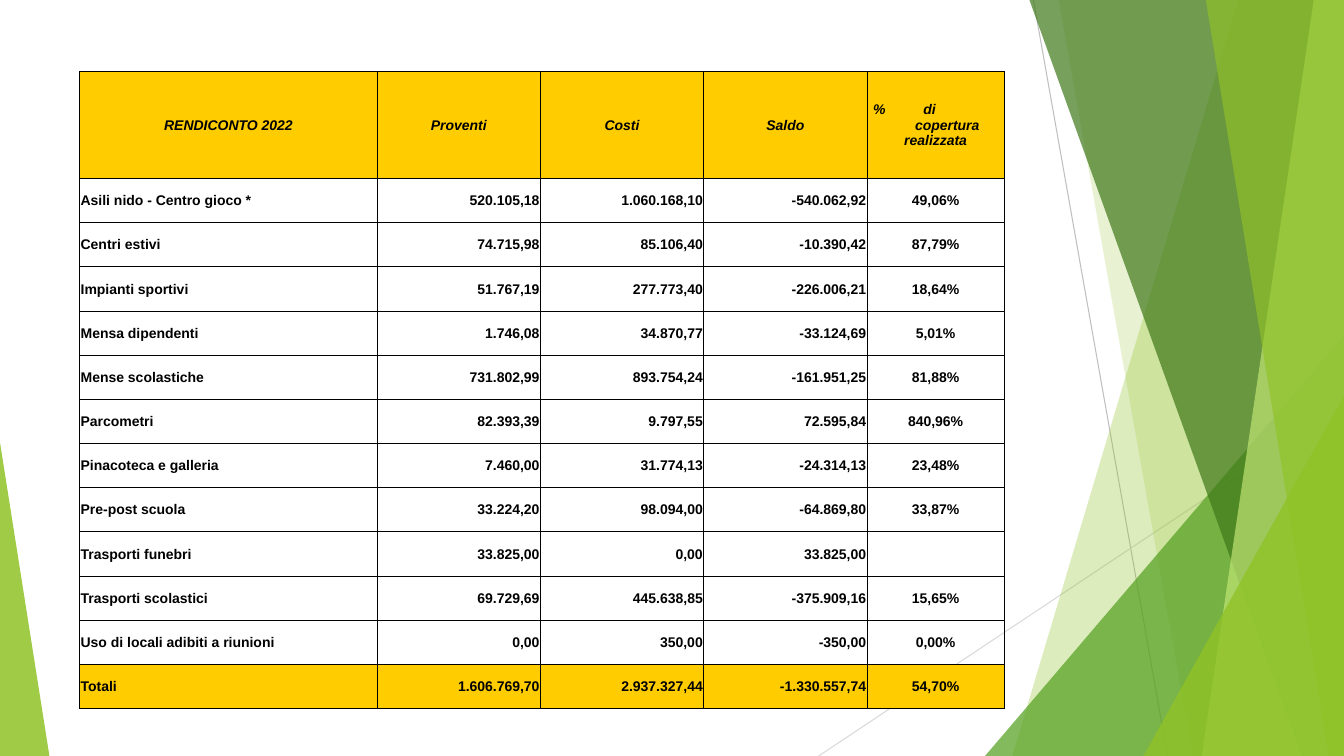
from lxml.etree import SubElement
from pptx import Presentation
from pptx.dml.color import RGBColor
from pptx.enum.shapes import MSO_CONNECTOR, MSO_SHAPE
from pptx.enum.text import MSO_ANCHOR, PP_ALIGN
from pptx.oxml.ns import qn
from pptx.util import Inches, Pt

HEADINGS = ["RENDICONTO 2022", "Proventi", "Costi", "Saldo", "%\tdi\ncopertura\nrealizzata"]
SERVICES = [
    ("Asili nido - Centro gioco *", "520.105,18", "1.060.168,10", "-540.062,92", "49,06%"),
    ("Centri estivi", "74.715,98", "85.106,40", "-10.390,42", "87,79%"),
    ("Impianti sportivi", "51.767,19", "277.773,40", "-226.006,21", "18,64%"),
    ("Mensa dipendenti", "1.746,08", "34.870,77", "-33.124,69", "5,01%"),
    ("Mense scolastiche", "731.802,99", "893.754,24", "-161.951,25", "81,88%"),
    ("Parcometri", "82.393,39", "9.797,55", "72.595,84", "840,96%"),
    ("Pinacoteca e galleria", "7.460,00", "31.774,13", "-24.314,13", "23,48%"),
    ("Pre-post scuola", "33.224,20", "98.094,00", "-64.869,80", "33,87%"),
    ("Trasporti funebri", "33.825,00", "0,00", "33.825,00", ""),
    ("Trasporti scolastici", "69.729,69", "445.638,85", "-375.909,16", "15,65%"),
    ("Uso di locali adibiti a riunioni", "0,00", "350,00", "-350,00", "0,00%"),
]
TOTALS = ("Totali", "1.606.769,70", "2.937.327,44", "-1.330.557,74", "54,70%")

WIDTH, HEIGHT = 13.33, 7.5
GOLD, BLACK = "FFCC00", "000000"
TABLE_LEFT, TABLE_TOP, TABLE_HEIGHT, HEADING_HEIGHT = 0.79, 0.71, 6.32, 1.06
COLUMN_WIDTHS = [2.95, 1.62, 1.62, 1.62, 1.36]
COLUMN_ALIGNS = [PP_ALIGN.LEFT] + [PP_ALIGN.RIGHT] * 3 + [PP_ALIGN.CENTER]

RAYS = [
    ((10.25, 0), (11.58, HEIGHT), "BFBFBF"),
    ((WIDTH, 4.03), (8.12, HEIGHT), "D9D9D9"),
]
FACETS = [
    ("band", 12.28, 10.04, "90C226", 30),
    ("band", 10.5, 11.83, "90C226", 20),
    ("right peak", 9.77, 3.33, "54A021", 72),
    ("band", 10.21, 12.91, "3F7819", 70),
    ("band", 13.03, 11.92, "C0E474", 70),
    ("band", 11.96, 13.18, "90C226", 65),
    ("right peak", 11.34, 3.93, "90C226", 80),
    ("left peak", 0.49, 4.39, "90C226", 85),
]


def color(code):
    return RGBColor.from_string(code)


def add_ray(slide, start, end, code):
    ray = slide.shapes.add_connector(
        MSO_CONNECTOR.STRAIGHT, *(Inches(length) for length in start + end))
    ray.line.color.rgb = color(code)
    ray.line.width = Pt(0.75)
    SubElement(ray.element.spPr, qn("a:effectLst"))


def add_band(slide, top_x, bottom_x):
    outline = slide.shapes.build_freeform(Inches(top_x), 0)
    corners = [(WIDTH, 0), (WIDTH, HEIGHT), (bottom_x, HEIGHT)]
    outline.add_line_segments([(Inches(x), Inches(y)) for x, y in corners], close=True)
    return outline.convert_to_shape()


def add_peak(slide, left, right, top, apex):
    peak = slide.shapes.add_shape(
        MSO_SHAPE.ISOSCELES_TRIANGLE, Inches(left), Inches(top),
        Inches(right - left), Inches(HEIGHT - top))
    peak.adjustments[0] = apex
    return peak


def add_facet(slide, kind, first, second, code, opacity):
    if kind == "band":
        facet = add_band(slide, first, second)
    elif kind == "right peak":
        facet = add_peak(slide, first, WIDTH, second, 1)
    else:
        facet = add_peak(slide, 0, first, second, 0)
    facet.shadow.inherit = False
    facet.line.fill.background()
    facet.fill.solid()
    facet.fill.fore_color.rgb = color(code)
    tint = facet.element.spPr.find(qn("a:solidFill")).find(qn("a:srgbClr"))
    SubElement(tint, qn("a:alpha"), val=str(opacity * 1000))


def add_borders(cell):
    properties = cell._tc.get_or_add_tcPr()
    for side in ("lnL", "lnR", "lnT", "lnB"):
        border = SubElement(properties, qn(f"a:{side}"), w=str(Pt(0.5)))
        SubElement(SubElement(border, qn("a:solidFill")), qn("a:srgbClr"), val=BLACK)


def fill_cell(cell, wording, align, is_heading, is_gold):
    cell.margin_left = cell.margin_right = cell.margin_top = Inches(0.01)
    cell.margin_bottom = 0
    cell.vertical_anchor = MSO_ANCHOR.MIDDLE
    add_borders(cell)
    if is_gold:
        cell.fill.solid()
        cell.fill.fore_color.rgb = color(GOLD)
    else:
        cell.fill.background()
    cell.text_frame.text = wording
    for paragraph in cell.text_frame.paragraphs:
        paragraph.alignment = PP_ALIGN.CENTER if is_heading else align
        for run in paragraph.runs:
            run.font.name = "Arial"
            run.font.size = Pt(10)
            run.font.bold = True
            run.font.italic = is_heading
            run.font.color.rgb = color(BLACK)


def stagger_coverage(cell):
    percent, coverage, _ = cell.text_frame.paragraphs
    percent.alignment = PP_ALIGN.LEFT
    for paragraph, indent in ((percent, 0.05), (coverage, 0.23)):
        properties = paragraph._p.get_or_add_pPr()
        properties.set("marL", str(Inches(indent)))
        properties.set("indent", "0")
    stops = SubElement(percent._p.get_or_add_pPr(), qn("a:tabLst"))
    SubElement(stops, qn("a:tab"), pos=str(Inches(0.29)), algn="l")


def add_accounts(slide):
    rows = [HEADINGS, *SERVICES, TOTALS]
    last = len(rows) - 1
    accounts = slide.shapes.add_table(
        len(rows), len(HEADINGS), Inches(TABLE_LEFT), Inches(TABLE_TOP),
        Inches(sum(COLUMN_WIDTHS)), Inches(TABLE_HEIGHT)).table
    accounts.first_row = accounts.horz_banding = False
    for column, width in zip(accounts.columns, COLUMN_WIDTHS):
        column.width = Inches(width)
    for r, row in enumerate(rows):
        height = (TABLE_HEIGHT - HEADING_HEIGHT) / last if r else HEADING_HEIGHT
        accounts.rows[r].height = Inches(height)
        for c, wording in enumerate(row):
            fill_cell(accounts.cell(r, c), wording, COLUMN_ALIGNS[c], r == 0, r in (0, last))
    stagger_coverage(accounts.cell(0, len(HEADINGS) - 1))


def main():
    deck = Presentation()
    deck.slide_width, deck.slide_height = Inches(WIDTH), Inches(HEIGHT)
    slide = deck.slides.add_slide(deck.slide_layouts[6])
    for ray in RAYS:
        add_ray(slide, *ray)
    for facet in FACETS:
        add_facet(slide, *facet)
    add_accounts(slide)
    deck.save("out.pptx")


if __name__ == "__main__":
    main()
